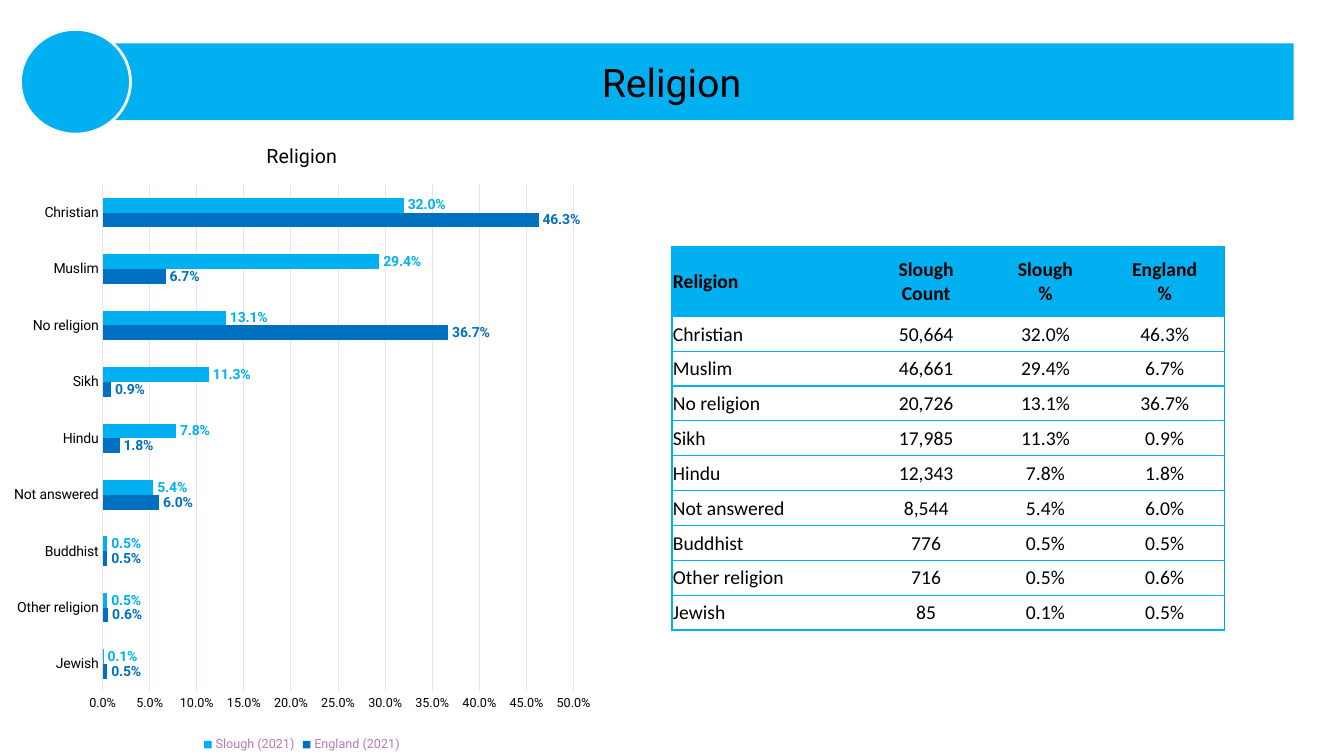
from dataclasses import dataclass
from typing import Any

from lxml import etree
from pptx import Presentation
from pptx.chart.data import CategoryChartData
from pptx.dml.color import RGBColor
from pptx.enum import chart as ch, shapes, text
from pptx.oxml import ns
from pptx.util import Pt


@dataclass(frozen=True)
class Theme:
    sky: str = "00B0F0"
    blue: str = "0070C0"
    edge: str = "00ABCA"
    ink: str = "000000"
    grid: str = "EEE0EF"
    legend: str = "B77ABB"
    ring: str = "FAFAFA"
    chart_font: str = "Roboto"
    table_font: str = "Calibri"
    heading: int = 28
    subheading: int = 14
    table_text: int = 14
    label: int = 10
    small: int = 9


@dataclass(frozen=True)
class Faith:
    name: str
    count: str
    slough: float
    england: float


@dataclass(frozen=True)
class Area:
    name: str
    shares: list[float]
    colour: str


THEME = Theme()
NO_STYLE = "{2D5ABB26-0587-4C30-8999-92F81FD0307C}"
HEADERS = ("Religion", "Slough\nCount", "Slough\n%", "England\n%")
FAITHS = (
    Faith("Christian", "50,664", 0.320, 0.463),
    Faith("Muslim", "46,661", 0.294, 0.067),
    Faith("No religion", "20,726", 0.131, 0.367),
    Faith("Sikh", "17,985", 0.113, 0.009),
    Faith("Hindu", "12,343", 0.078, 0.018),
    Faith("Not answered", "8,544", 0.054, 0.060),
    Faith("Buddhist", "776", 0.005, 0.005),
    Faith("Other religion", "716", 0.005, 0.006),
    Faith("Jewish", "85", 0.001, 0.005),
)


def rgb(colour: str) -> RGBColor:
    return RGBColor.from_string(colour)


def paint(part: Any, colour: str) -> None:
    part.fill.solid()
    part.fill.fore_color.rgb = rgb(colour)


def style_font(font: Any, size: int, colour: str, name: str, bold: bool = False) -> None:
    font.size = Pt(size)
    font.name = name
    font.bold = bold
    font.color.rgb = rgb(colour)


def style_line(line: Any, colour: str, width: float) -> None:
    line.color.rgb = rgb(colour)
    line.width = Pt(width)


def add_heading(slide: Any) -> None:
    banner = slide.shapes.title
    banner.left, banner.top, banner.width, banner.height = Pt(35.3), Pt(31), Pt(888.7), Pt(54.8)
    paint(banner, THEME.sky)
    banner.text_frame.vertical_anchor = text.MSO_ANCHOR.MIDDLE
    heading = banner.text_frame.paragraphs[0]
    heading.alignment = text.PP_ALIGN.CENTER
    run = heading.add_run()
    run.text = "Religion"
    style_font(run.font, THEME.heading, THEME.ink, THEME.chart_font)


def set_plot_layout(chart: Any, x: float, y: float, w: float, h: float) -> None:
    plot_area = chart.plots[0]._element.getparent()
    for old in plot_area.findall(ns.qn("c:layout")):
        plot_area.remove(old)
    layout = etree.Element(ns.qn("c:layout"))
    manual = etree.SubElement(layout, ns.qn("c:manualLayout"))
    settings = {"layoutTarget": "inner", "xMode": "edge", "yMode": "edge", "x": x, "y": y, "w": w, "h": h}
    for tag, value in settings.items():
        etree.SubElement(manual, ns.qn(f"c:{tag}")).set("val", str(value))
    plot_area.insert(0, layout)


def add_share_chart(slide: Any) -> None:
    faiths = FAITHS[::-1]
    areas = (
        Area("England (2021)", [f.england for f in faiths], THEME.blue),
        Area("Slough (2021)", [f.slough for f in faiths], THEME.sky),
    )
    shares = CategoryChartData(number_format="0.0%")
    shares.categories = [f.name for f in faiths]
    for area in areas:
        shares.add_series(area.name, area.shares)
    chart = slide.shapes.add_chart(
        ch.XL_CHART_TYPE.BAR_CLUSTERED, Pt(0), Pt(86.4), Pt(431.3), Pt(453.6), shares
    ).chart
    style_font(chart.font, THEME.label, THEME.ink, THEME.chart_font)

    chart.has_title = True
    run = chart.chart_title.text_frame.paragraphs[0].add_run()
    run.text = "Religion"
    style_font(run.font, THEME.subheading, THEME.ink, THEME.chart_font)
    chart.chart_title.include_in_layout = False

    chart.has_legend = True
    chart.legend.position = ch.XL_LEGEND_POSITION.BOTTOM
    chart.legend.include_in_layout = False
    style_font(chart.legend.font, THEME.small, THEME.legend, THEME.chart_font)

    for axis, size in ((chart.category_axis, THEME.label), (chart.value_axis, THEME.small)):
        axis.major_tick_mark = axis.minor_tick_mark = ch.XL_TICK_MARK.NONE
        style_font(axis.tick_labels.font, size, THEME.ink, THEME.chart_font)
    style_line(chart.category_axis.format.line, THEME.grid, 0.75)
    percent = chart.value_axis
    percent.minimum_scale, percent.maximum_scale, percent.major_unit = 0, 0.5, 0.05
    percent.tick_labels.number_format = "0.0%"
    percent.tick_labels.number_format_is_linked = False
    percent.format.line.fill.background()
    percent.has_major_gridlines = True
    style_line(percent.major_gridlines.format.line, THEME.grid, 0.75)

    bars = chart.plots[0]
    bars.gap_width = 182
    bars.vary_by_categories = False
    for area, series in zip(areas, bars.series):
        paint(series.format, area.colour)
        labels = series.data_labels
        labels.show_value = True
        labels.position = ch.XL_LABEL_POSITION.OUTSIDE_END
        labels.number_format = "0.0%"
        labels.number_format_is_linked = False
        style_font(labels.font, THEME.label, area.colour, THEME.chart_font, True)
    set_plot_layout(chart, 0.17, 0.1, 0.78, 0.8)


def add_badge(slide: Any) -> None:
    badge = slide.shapes.add_shape(
        shapes.MSO_SHAPE.FLOWCHART_CONNECTOR, Pt(14.6), Pt(21), Pt(78.6), Pt(74.8)
    )
    badge.shadow.inherit = False
    paint(badge, THEME.sky)
    style_line(badge.line, THEME.ring, 2)


def add_border(cell: Any, side: str, colour: str, width: float) -> None:
    border = etree.SubElement(cell._tc.get_or_add_tcPr(), ns.qn(f"a:ln{side}"), w=str(Pt(width)))
    fill = etree.SubElement(border, ns.qn("a:solidFill"))
    etree.SubElement(fill, ns.qn("a:srgbClr"), val=colour)


def fill_cell(cell: Any, content: str, row: int, column: int, last: int) -> None:
    cell.margin_left = cell.margin_right = cell.margin_top = Pt(0.7)
    cell.margin_bottom = Pt(0)
    cell.vertical_anchor = text.MSO_ANCHOR.MIDDLE
    if column == 0:
        add_border(cell, "L", THEME.sky, 1)
    if column == last:
        add_border(cell, "R", THEME.edge, 0.5)
    for side in "TB":
        add_border(cell, side, THEME.sky, 1)
    if row == 0:
        paint(cell, THEME.sky)
    else:
        cell.fill.background()
    frame = cell.text_frame
    for index, line in enumerate(content.split("\n")):
        paragraph = frame.add_paragraph() if index else frame.paragraphs[0]
        paragraph.alignment = text.PP_ALIGN.CENTER if column else text.PP_ALIGN.LEFT
        run = paragraph.add_run()
        run.text = line
        style_font(run.font, THEME.table_text, THEME.ink, THEME.table_font, row == 0)


def add_faith_table(slide: Any) -> None:
    rows = [HEADERS] + [(f.name, f.count, f"{f.slough:.1%}", f"{f.england:.1%}") for f in FAITHS]
    frame = slide.shapes.add_table(
        len(rows), len(HEADERS), Pt(480), Pt(176.4), Pt(394.6), Pt(273.7)
    )
    table = frame.table
    table.first_row = table.horz_banding = False
    table._tbl.tblPr.find(ns.qn("a:tableStyleId")).text = NO_STYLE
    for index, column in enumerate(table.columns):
        column.width = Pt(85.2 if index else 139)
    for index, row in enumerate(table.rows):
        row.height = Pt(24.9 if index else 49.6)
    for r, contents in enumerate(rows):
        for c, content in enumerate(contents):
            fill_cell(table.cell(r, c), content, r, c, len(HEADERS) - 1)


def main() -> None:
    deck = Presentation()
    deck.slide_width, deck.slide_height = Pt(960), Pt(540)
    slide = deck.slides.add_slide(deck.slide_layouts[5])
    add_heading(slide)
    add_share_chart(slide)
    add_badge(slide)
    add_faith_table(slide)
    deck.save("out.pptx")


if __name__ == "__main__":
    main()
